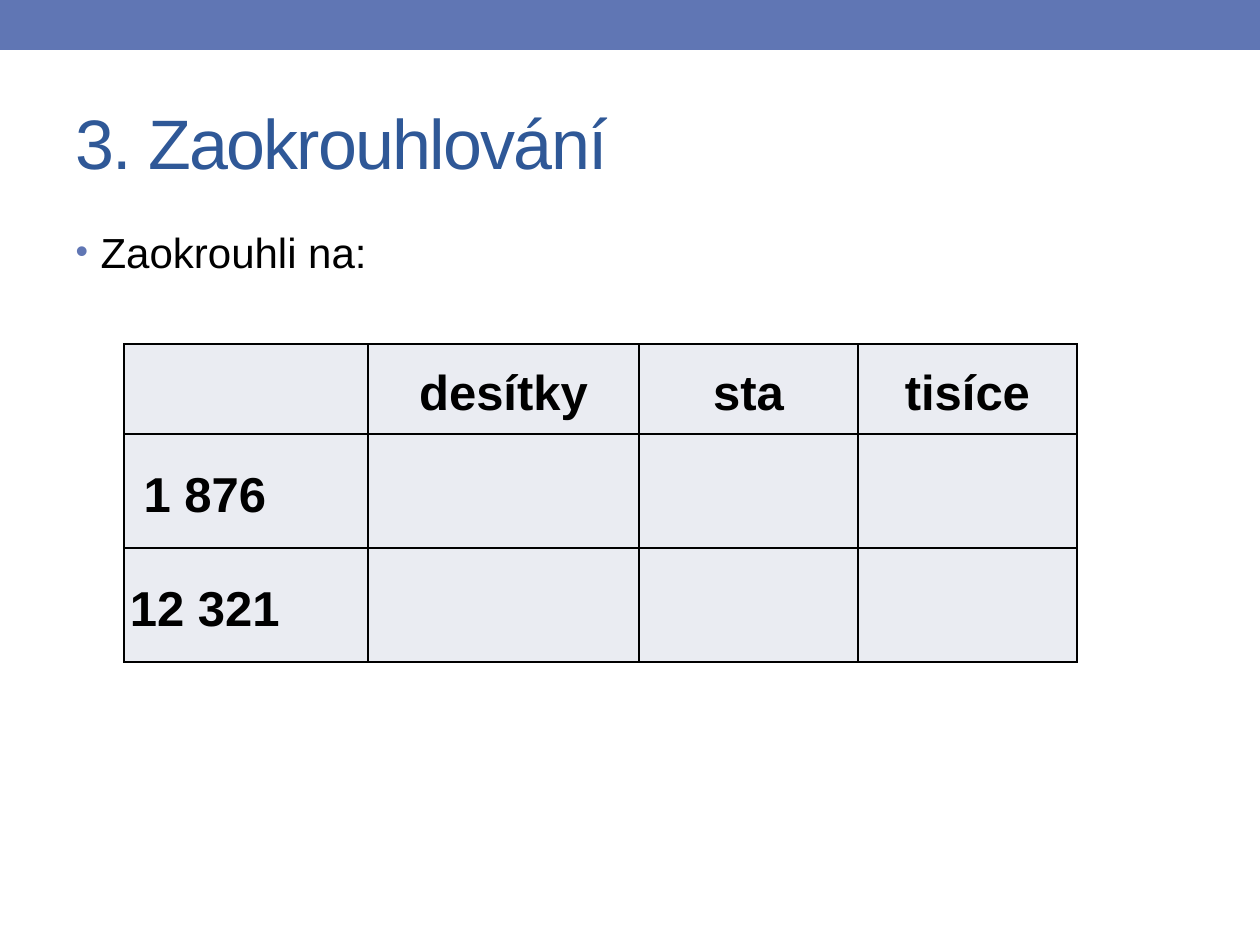
from lxml.etree import SubElement
from pptx import Presentation
from pptx.dml.color import RGBColor
from pptx.enum.shapes import MSO_SHAPE as Shape
from pptx.enum.text import MSO_ANCHOR as Anchor, PP_ALIGN as Align
from pptx.oxml import parse_xml
from pptx.oxml.ns import nsdecls, qn
from pptx.util import Emu, Pt

TITLE = "3. Zaokrouhlování"
TASK = "Zaokrouhli na:"
ROWS = [
    ["", "desítky", "sta", "tisíce"],
    [" 1 876", "", "", ""],
    ["12 321", "", "", ""],
]
COLUMN_WIDTHS = [244, 271, 219, 219]
ROW_HEIGHTS = [90, 114, 114]
TABLE_LEFT, TABLE_TOP = 124, 344
COLORS = {"band": "6076B4", "title": "2F5897", "text": "000000",
          "cell": "EAECF2", "border": "000000"}
FONT = "Arial"
SCALE = 914400 / 126


def px(length):
    return Emu(round(length * SCALE))


def color(name):
    return RGBColor.from_string(COLORS[name])


def paint(part, name):
    part.fill.solid()
    part.fill.fore_color.rgb = color(name)


def move(shape, left, top, width, height):
    shape.left, shape.top = px(left), px(top)
    shape.width, shape.height = px(width), px(height)


def write(frame, text, size, ink="text", bold=False, align=Align.LEFT,
          anchor=Anchor.TOP, line=None, after=None, tracking=None):
    """Put one formatted paragraph in a text frame or cell and return it."""
    frame.vertical_anchor = anchor
    para = getattr(frame, "text_frame", frame).paragraphs[0]
    para.alignment = align
    if line:
        para.line_spacing = line
    if after:
        para.space_after = Pt(after)
    span = para.add_run()
    span.text = text
    span.font.name = FONT
    span.font.size = Pt(size)
    span.font.bold = bold
    span.font.color.rgb = color(ink)
    if tracking:
        span.font._element.set("spc", str(tracking * 100))
    return para


def add_bullet(para, indent):
    props = para._p.get_or_add_pPr()
    props.set("marL", str(px(indent)))
    props.set("indent", str(-px(indent)))
    tint = SubElement(props, qn("a:buClr"))
    SubElement(tint, qn("a:srgbClr"), val=COLORS["band"])
    SubElement(props, qn("a:buSzPct"), val="85000")
    SubElement(props, qn("a:buFont"), typeface=FONT)
    SubElement(props, qn("a:buChar"), char="•")


def add_borders(cell):
    props = cell._tc.get_or_add_tcPr()
    for index, side in enumerate("LRTB"):
        props.insert(index, parse_xml(
            f'<a:ln{side} {nsdecls("a")} w="{Pt(1)}"><a:solidFill>'
            f'<a:srgbClr val="{COLORS["border"]}"/></a:solidFill></a:ln{side}>'))


def add_rounding_table(page):
    table = page.shapes.add_table(
        len(ROWS), len(COLUMN_WIDTHS), px(TABLE_LEFT), px(TABLE_TOP),
        px(sum(COLUMN_WIDTHS)), px(sum(ROW_HEIGHTS))).table
    for column, width in zip(table.columns, COLUMN_WIDTHS):
        column.width = px(width)
    for row, height in zip(table.rows, ROW_HEIGHTS):
        row.height = px(height)
    for r, texts in enumerate(ROWS):
        for c, text in enumerate(texts):
            cell = table.cell(r, c)
            paint(cell, "cell")
            add_borders(cell)
            cell.margin_left = cell.margin_right = px(6)
            cell.margin_top = cell.margin_bottom = 0
            if text:
                write(cell, text, 28, bold=True, anchor=Anchor.MIDDLE,
                      align=Align.LEFT if c == 0 else Align.CENTER,
                      line=1.15, after=10)


def main():
    deck = Presentation()
    deck.slide_width, deck.slide_height = px(1260), px(945)
    page = deck.slides.add_slide(deck.slide_layouts[1])

    band = page.shapes.add_shape(Shape.RECTANGLE, 0, 0, px(1260), px(50))
    band.shadow.inherit = False
    paint(band, "band")
    band.line.fill.background()

    title, body = page.shapes.title, page.placeholders[1]
    move(title, 63, 73, 1134, 136)
    write(title.text_frame, TITLE, 40, ink="title", anchor=Anchor.MIDDLE,
          tracking=-1)
    move(body, 63, 220, 1134, 672)
    add_bullet(write(body.text_frame, TASK, 24), 25)

    add_rounding_table(page)
    deck.save("out.pptx")


if __name__ == "__main__":
    main()
